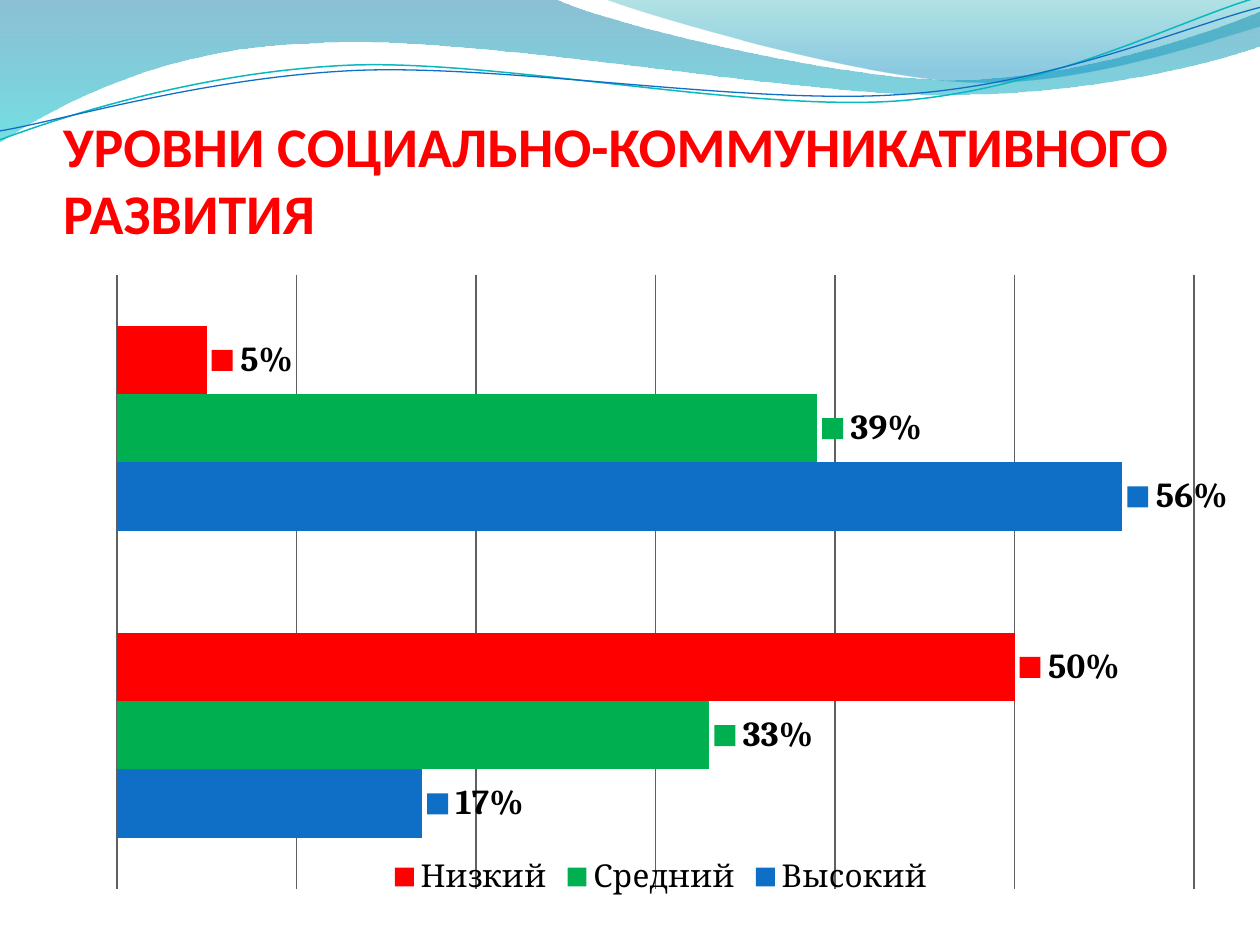
from lxml import etree
from pptx import Presentation
from pptx import util as u
from pptx.chart.data import CategoryChartData
from pptx.dml.color import RGBColor
from pptx.enum import chart as charts, text
from pptx.oxml import parse_xml
from pptx.oxml.ns import nsdecls, qn

RED = RGBColor(0xFF, 0x00, 0x00)
GREEN = RGBColor(0x00, 0xB0, 0x50)
BLUE = RGBColor(0x0F, 0x6F, 0xC6)
TEAL = RGBColor(0x0A, 0xB8, 0xBF)
BLACK = RGBColor(0x00, 0x00, 0x00)
GRID = RGBColor(0x60, 0x60, 0x60)
DEEP_BLUE = RGBColor(0x00, 0x74, 0xA1)
AQUA = RGBColor(0x00, 0xC6, 0xCF)
SEA_GREEN = RGBColor(0x00, 0xA1, 0xA9)
SKY_BLUE = RGBColor(0x00, 0x8B, 0xBF)

UNITS_PER_CM = 1000
CURVE_TILT = 357.3

# Outlines in cm: a start point, then points (straight) or triples of points (Bézier).
BROAD_WAVE = [
    (0, 0), (11.18, -0.03),
    ((12.09, 0.43), (16.87, 1.6), (19.25, 1.6)),
    ((21.67, 1.6), (24.33, 0.66), (25.4, 0.23)), (25.43, 0.91),
    ((24.97, 1.12), (22.1, 1.93), (18.95, 1.91)),
    ((15.8, 1.91), (9.7, 0.71), (6.53, 0.86)),
    ((3.28, 0.91), (1.17, 2.11), (-0.03, 2.87)),
]
RIGHT_WAVE = [
    (12.17, -0.03),
    ((12.93, 0.28), (17.32, 1.57), (19.53, 1.65)),
    ((21.74, 1.75), (24.41, 0.81), (25.4, 0.53)), (25.4, 0),
]
# The two lines are given before they are tilted.
TEAL_LINE = [
    (-0.05, 2.22),
    ((1.19, 1.82), (4.02, 1.04), (7.05, 1.05)),
    ((10.05, 1.07), (15.02, 2.37), (18.08, 2.29)),
    ((21.13, 2.2), (23.86, 0.91), (25.4, 0.55)),
]
BLUE_LINE = [
    (-0.04, 2.04),
    ((1.16, 1.9), (4.17, 1.15), (7.2, 1.16)),
    ((10.25, 1.18), (15.13, 2.25), (18.19, 2.16)),
    ((21.22, 2.1), (23.93, 1.06), (25.45, 0.75)),
]


def is_curve(segment):
    return isinstance(segment[0], tuple)


def add_outline(page, box, outline, closed):
    """Build a freeform through all points, then merge each triple into one curve."""
    points = []
    for segment in outline:
        points.extend(segment if is_curve(segment) else [segment])
    points = [(x * UNITS_PER_CM, y * UNITS_PER_CM) for x, y in points]
    builder = page.shapes.build_freeform(*points[0], scale=u.Cm(1) / UNITS_PER_CM)
    builder.add_line_segments(points[1:], close=closed)
    shape = builder.convert_to_shape(box[0], box[1])
    shape.shadow.inherit = False
    drawing = next(shape.element.iter(qn("a:path")))
    lines = iter(drawing.findall(qn("a:lnTo")))
    for segment in outline[1:]:
        line = next(lines)
        if is_curve(segment):
            curve = etree.Element(qn("a:cubicBezTo"))
            drawing.replace(line, curve)
            for part in (line, next(lines), next(lines)):
                curve.append(part.find(qn("a:pt")))
                if part is not line:
                    drawing.remove(part)
    return shape


def add_wave(page, box, outline, stops):
    """Add a filled wave; stops are (position %, colour, opacity %), top to bottom."""
    shape = add_outline(page, box, outline, True)
    shape.line.fill.background()
    shape.fill.background()
    stop_xml = "".join(
        f'<a:gs pos="{position * 1000}"><a:srgbClr val="{colour}">'
        f'<a:alpha val="{opacity * 1000}"/></a:srgbClr></a:gs>'
        for position, colour, opacity in stops)
    gradient = parse_xml(f'<a:gradFill {nsdecls("a")}><a:gsLst>{stop_xml}</a:gsLst>'
                         '<a:lin ang="5400000" scaled="0"/></a:gradFill>')
    properties = shape.element.spPr
    properties.replace(properties.find(qn("a:noFill")), gradient)


def add_curve(page, box, outline, colour, width):
    shape = add_outline(page, box, outline, False)
    shape.rotation = CURVE_TILT
    shape.fill.background()
    shape.line.color.rgb = colour
    shape.line.width = u.Pt(width)


def add_header_waves(page, box):
    add_wave(page, box, BROAD_WAVE, [(0, DEEP_BLUE, 45), (100, AQUA, 55)])
    add_wave(page, box, RIGHT_WAVE, [(0, SEA_GREEN, 30), (80, SKY_BLUE, 45)])
    add_curve(page, box, TEAL_LINE, TEAL, 0.85)
    add_curve(page, box, BLUE_LINE, BLUE, 0.75)


def set_title(page, box, wording):
    """Fill the title and bring it in front of the waves."""
    title = page.shapes.title
    title.element.getparent().append(title.element)
    title.left, title.top, title.width, title.height = box
    frame = title.text_frame
    frame.text = wording
    frame.word_wrap = True
    frame.auto_size = text.MSO_AUTO_SIZE.NONE
    frame.vertical_anchor = text.MSO_ANCHOR.BOTTOM
    frame.margin_left = frame.margin_right = frame.margin_bottom = 0
    frame.margin_top = u.Cm(0.13)
    para = frame.paragraphs[0]
    para.alignment = text.PP_ALIGN.LEFT
    para.font.name = "Calibri"
    para.font.size = u.Pt(32)
    para.font.bold = True
    para.font.color.rgb = RED


def set_plot_layout(chart, **fractions):
    """Fix the inner plot area as fractions of the chart."""
    area = chart.element.find(".//" + qn("c:plotArea"))
    for old in area.findall(qn("c:layout")):
        area.remove(old)
    layout = etree.Element(qn("c:layout"))
    manual = etree.SubElement(layout, qn("c:manualLayout"))
    settings = {"layoutTarget": "inner", "xMode": "edge", "yMode": "edge", **fractions}
    for tag, value in settings.items():
        etree.SubElement(manual, qn("c:" + tag)).set("val", str(value))
    area.insert(0, layout)


def add_levels_chart(page, box):
    data = CategoryChartData(number_format="0%")
    data.categories = ["1", "2"]
    levels = [("Высокий", (0.17, 0.56), BLUE),
              ("Средний", (0.33, 0.39), GREEN),
              ("Низкий", (0.5, 0.05), RED)]
    for name, values, _ in levels:
        data.add_series(name, values)
    chart = page.shapes.add_chart(charts.XL_CHART_TYPE.BAR_CLUSTERED, *box, data).chart
    chart.has_title = False
    chart.font.name = "Cambria"
    chart.font.size = u.Pt(18)
    chart.font.color.rgb = BLACK
    chart.category_axis.visible = False
    axis = chart.value_axis
    axis.visible = False
    axis.minimum_scale, axis.maximum_scale, axis.major_unit = 0, 0.6, 0.1
    axis.has_major_gridlines = True
    axis.major_gridlines.format.line.color.rgb = GRID
    axis.major_gridlines.format.line.width = u.Pt(0.75)
    chart.has_legend = True
    chart.legend.position = charts.XL_LEGEND_POSITION.BOTTOM
    chart.legend.include_in_layout = True
    plot = chart.plots[0]
    plot.gap_width = 150
    plot.overlap = 0
    plot.vary_by_categories = False
    for series, (_, _, colour) in zip(plot.series, levels):
        series.format.fill.solid()
        series.format.fill.fore_color.rgb = colour
        labels = series.data_labels
        labels.show_value = True
        labels.show_legend_key = True
        labels.number_format = "0%"
        labels.number_format_is_linked = False
        labels.position = charts.XL_LABEL_POSITION.OUTSIDE_END
        labels.font.name = "Cambria"
        labels.font.size = u.Pt(20)
        labels.font.bold = True
        labels.font.color.rgb = BLACK
    set_plot_layout(chart, x=0.02, y=0.02, w=0.95, h=0.96)


def main():
    deck = Presentation()
    deck.slide_width, deck.slide_height = u.Cm(25.4), u.Cm(19.05)
    page = deck.slides.add_slide(deck.slide_layouts[5])
    add_header_waves(page, (0, 0, deck.slide_width, u.Cm(2.87)))
    set_title(page, (u.Cm(1.27), u.Cm(1.07), u.Cm(22.86), u.Cm(3.89)),
              "УРОВНИ СОЦИАЛЬНО-КОММУНИКАТИВНОГО РАЗВИТИЯ")
    add_levels_chart(page, (u.Cm(1.9), u.Cm(5.28), u.Cm(22.86), u.Cm(12.9)))
    deck.save("out.pptx")


if __name__ == "__main__":
    main()
